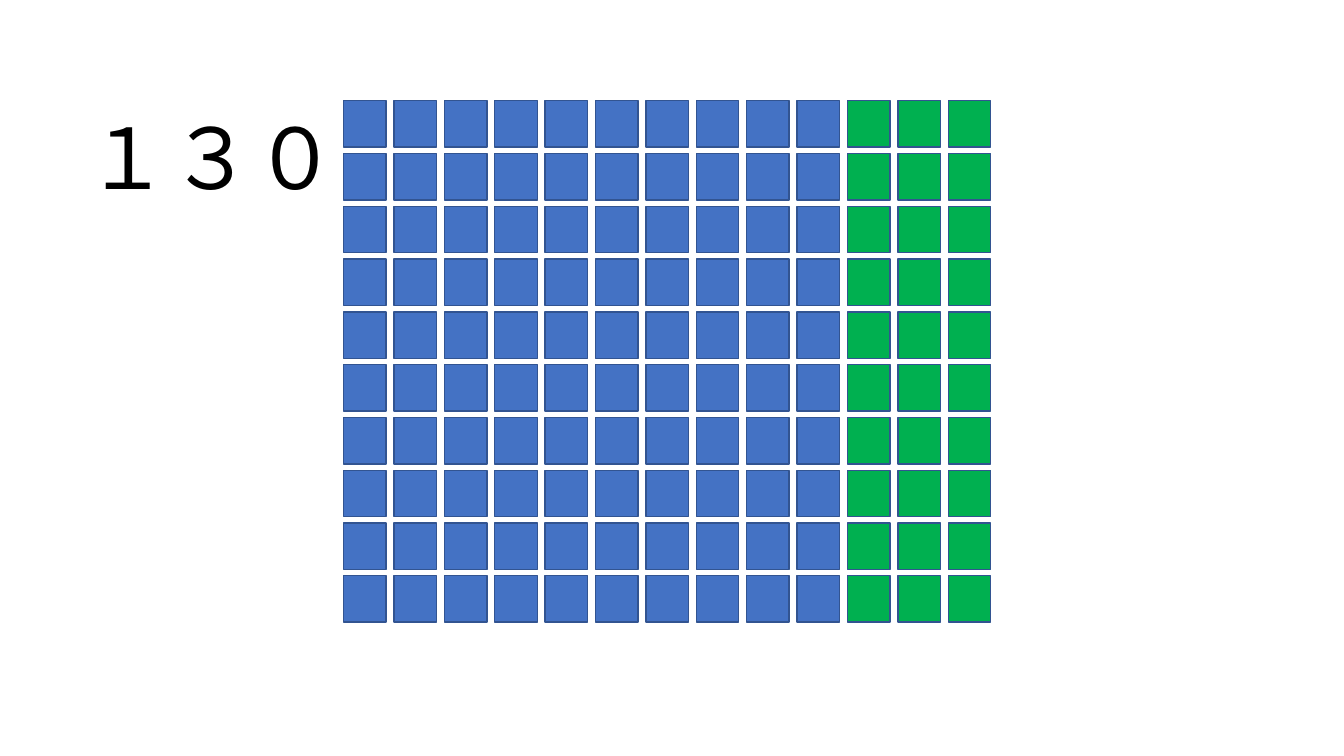
from dataclasses import dataclass

from lxml.etree import SubElement
from pptx import Presentation
from pptx.dml.color import RGBColor
from pptx.enum.shapes import MSO_SHAPE
from pptx.enum.text import MSO_ANCHOR, MSO_AUTO_SIZE, PP_ALIGN
from pptx.oxml.ns import qn
from pptx.util import Cm, Pt

# Content: each block is a number of columns of ten
NUMBER = "１３０"
TENS = 10
BLOCKS = [("hundred", 10), ("thirty", 3)]


@dataclass(frozen=True)
class Theme:
    hundred: RGBColor = RGBColor(0x44, 0x72, 0xC4)
    thirty: RGBColor = RGBColor(0x00, 0xB0, 0x50)
    outline: RGBColor = RGBColor(0x32, 0x54, 0x91)
    ink: RGBColor = RGBColor(0, 0, 0)
    font: str = "Noto Sans CJK JP"
    number_size: Pt = Pt(60)
    outline_width: Pt = Pt(1)


THEME = Theme()

# Layout
GRID_LEFT, GRID_TOP = Cm(8.66), Cm(2.54)
CELL_WIDTH, CELL_HEIGHT = Cm(1.07), Cm(1.17)
COLUMN_STEP, ROW_STEP = Cm(1.27), Cm(1.33)


def write_number(slide):
    title = slide.shapes.title
    title.left, title.top, title.width, title.height = (
        Cm(1.91), Cm(2.54), Cm(7.29), Cm(2.82))
    frame = title.text_frame
    frame.text = NUMBER
    frame.word_wrap = True
    frame.auto_size = MSO_AUTO_SIZE.SHAPE_TO_FIT_TEXT
    frame.vertical_anchor = MSO_ANCHOR.TOP
    digits = frame.paragraphs[0]
    digits.alignment = PP_ALIGN.LEFT
    digits.font.size = THEME.number_size
    digits.font.name = THEME.font
    digits.font.color.rgb = THEME.ink
    # Full-width digits take the East Asian font
    for properties in digits._p.iter(qn("a:defRPr")):
        SubElement(properties, qn("a:ea"), typeface=THEME.font)
    run = digits.runs[0]
    run.font.name = THEME.font
    SubElement(run._r.get_or_add_rPr(), qn("a:ea"), typeface=THEME.font)


def draw_ten(slide, column, color):
    ten = slide.shapes.add_group_shape()
    for row in range(TENS):
        unit = ten.shapes.add_shape(
            MSO_SHAPE.RECTANGLE,
            GRID_LEFT + column * COLUMN_STEP, GRID_TOP + row * ROW_STEP,
            CELL_WIDTH, CELL_HEIGHT)
        unit.shadow.inherit = False
        unit.fill.solid()
        unit.fill.fore_color.rgb = color
        unit.line.color.rgb = THEME.outline
        unit.line.width = THEME.outline_width


def main():
    deck = Presentation()
    deck.slide_width, deck.slide_height = Cm(33.87), Cm(19.05)
    slide = deck.slides.add_slide(deck.slide_layouts[5])
    write_number(slide)

    # Columns of ten, block after block
    colors = [getattr(THEME, block) for block, tens in BLOCKS for _ in range(tens)]
    for column, color in enumerate(colors):
        draw_ten(slide, column, color)

    deck.save("out.pptx")


if __name__ == "__main__":
    main()
